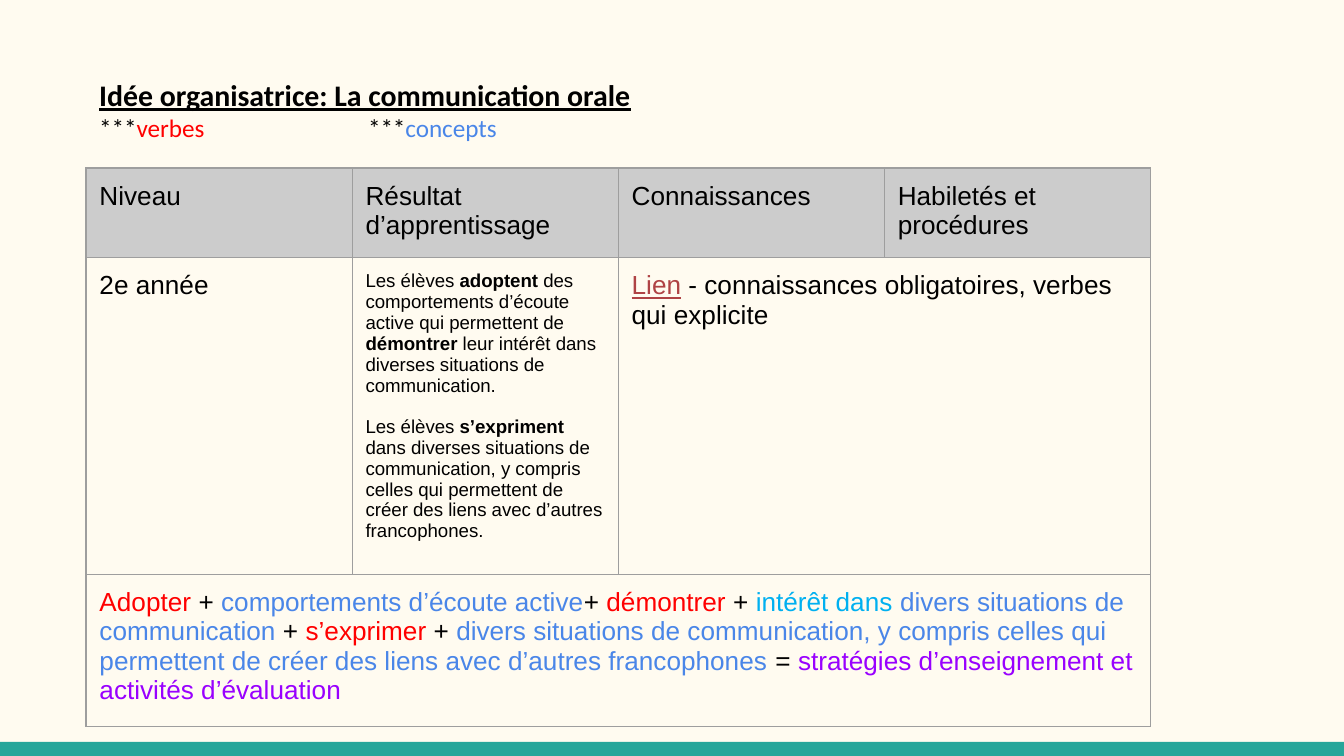
from lxml import etree
from pptx import Presentation
from pptx.dml.color import RGBColor
from pptx.enum.shapes import MSO_SHAPE
from pptx.oxml.ns import qn
from pptx.util import Inches, Pt

RECTANGLE = MSO_SHAPE.RECTANGLE

CREAM = RGBColor(0xFF, 0xFB, 0xF0)
TEAL = RGBColor(0x26, 0xA6, 0x9A)
BLACK = RGBColor(0x00, 0x00, 0x00)
RED = RGBColor(0xFF, 0x00, 0x00)
BLUE = RGBColor(0x4A, 0x86, 0xE8)
SKY = RGBColor(0x00, 0xB0, 0xF0)
PURPLE = RGBColor(0x99, 0x00, 0xFF)
LINK_RED = RGBColor(0xAF, 0x43, 0x45)
HEADER_GRAY = RGBColor(0xCC, 0xCC, 0xCC)
BORDER_GRAY = RGBColor(0x9E, 0x9E, 0x9E)

MARGIN = Inches(0.1)
COLUMN_WIDTH = 1.98
ROW_HEIGHTS = [0.56, 2.09, 1.1]
FRAME_SIZE = Inches(3.28)
HEADERS = ["Niveau", "Résultat d’apprentissage", "Connaissances", "Habiletés et procédures"]
OUTCOMES = [
    [
        ("Les élèves ", BLACK),
        ("adoptent ", BLACK, True),
        ("des comportements d’écoute active qui permettent de ", BLACK),
        ("démontrer", BLACK, True),
        (" leur intérêt dans diverses situations de communication.", BLACK),
    ],
    [
        ("Les élèves ", BLACK),
        ("s’expriment", BLACK, True),
        (" dans diverses situations de communication, y compris celles qui permettent "
         "de créer des liens avec d’autres francophones.", BLACK),
    ],
]
SUMMARY = [
    ("Adopter", RED),
    (" + ", BLACK),
    ("comportements d’écoute active", BLUE),
    ("+ ", BLACK),
    ("démontrer ", RED),
    ("+ ", BLACK),
    ("intérêt dans ", SKY),
    ("divers situations de communication", BLUE),
    (" + ", BLACK),
    ("s’exprimer", RED),
    (" + ", BLACK),
    ("divers situations de communication, y compris celles qui permettent "
     "de créer des liens avec d’autres francophones ", BLUE),
    ("= ", BLACK),
    ("stratégies d’enseignement et activités d’évaluation", PURPLE),
]


def add_run(p, size, font, text, color, bold=False, underline=False):
    r = p.add_run()
    r.text = text
    r.font.size = Pt(size)
    r.font.name = font
    r.font.color.rgb = color
    r.font.bold = bold
    r.font.underline = underline


def write_paragraph(p, segments, size=14, font="Arial"):
    for segment in segments:
        add_run(p, size, font, *segment)


def set_margins(box):
    box.margin_left = box.margin_right = MARGIN
    box.margin_top = box.margin_bottom = MARGIN


def add_tab_stops(p, positions):
    tabs = etree.SubElement(p._p.get_or_add_pPr(), qn("a:tabLst"))
    for position in positions:
        etree.SubElement(tabs, qn("a:tab"), pos=str(Inches(position)), algn="l")


def add_borders(cell):
    tc_pr = cell._tc.get_or_add_tcPr()
    for i, side in enumerate(["lnL", "lnR", "lnT", "lnB"]):
        ln = etree.Element(qn("a:" + side), w=str(Pt(0.75)))
        fill = etree.SubElement(ln, qn("a:solidFill"))
        etree.SubElement(fill, qn("a:srgbClr"), val=str(BORDER_GRAY))
        tc_pr.insert(i, ln)


def style_cell(cell, is_header):
    set_margins(cell)
    if is_header:
        cell.fill.solid()
        cell.fill.fore_color.rgb = HEADER_GRAY
    else:
        cell.fill.background()
    add_borders(cell)


def add_footer_bar(s):
    sp = s.shapes.add_shape(RECTANGLE, 0, Inches(5.52), Inches(10), Inches(0.11))
    sp.shadow.inherit = False
    sp.fill.solid()
    sp.fill.fore_color.rgb = TEAL
    sp.line.fill.background()


def add_heading(s):
    sp = s.shapes.add_textbox(Inches(0.64), Inches(0.47), Inches(9.07), Inches(0.67))
    tf = sp.text_frame
    tf.word_wrap = True
    set_margins(tf)
    title = "Idée organisatrice: La communication orale"
    write_paragraph(tf.paragraphs[0], [(title, BLACK, True, True)], 16, "Calibri")
    legend = [("***", BLACK), ("verbes", RED), ("\t\t***", BLACK), ("concepts", BLUE)]
    p = tf.add_paragraph()
    add_tab_stops(p, [1, 2])
    write_paragraph(p, legend, 13.5, "Calibri")


def add_outcomes(cell):
    tf = cell.text_frame
    write_paragraph(tf.paragraphs[0], OUTCOMES[0], 10)
    p = tf.add_paragraph()
    p.space_before = Pt(11)
    write_paragraph(p, OUTCOMES[1], 10)


def add_curriculum_table(s):
    columns = len(HEADERS)
    frame = s.shapes.add_table(
        len(ROW_HEIGHTS), columns, Inches(0.64), Inches(1.25), FRAME_SIZE, FRAME_SIZE
    )
    table = frame.table
    table.first_row = False
    table.horz_banding = False
    for column in table.columns:
        column.width = Inches(COLUMN_WIDTH)
    for i, height in enumerate(ROW_HEIGHTS):
        table.rows[i].height = Inches(height)
        for cell in table.rows[i].cells:
            style_cell(cell, i == 0)
    frame.width = frame.height = FRAME_SIZE
    table.cell(1, 2).merge(table.cell(1, 3))
    table.cell(2, 0).merge(table.cell(2, 3))

    for i, header in enumerate(HEADERS):
        write_paragraph(table.cell(0, i).text_frame.paragraphs[0], [(header, BLACK)])
    write_paragraph(table.cell(1, 0).text_frame.paragraphs[0], [("2e année", BLACK)])
    add_outcomes(table.cell(1, 1))
    knowledge = [
        ("Lien", LINK_RED, False, True),
        (" - connaissances obligatoires, verbes qui explicite", BLACK),
    ]
    write_paragraph(table.cell(1, 2).text_frame.paragraphs[0], knowledge)
    write_paragraph(table.cell(2, 0).text_frame.paragraphs[0], SUMMARY)


def main():
    prs = Presentation()
    prs.slide_width = Inches(10)
    prs.slide_height = Inches(10 * 9 / 16)
    s = prs.slides.add_slide(prs.slide_layouts[6])
    s.background.fill.solid()
    s.background.fill.fore_color.rgb = CREAM
    add_footer_bar(s)
    add_heading(s)
    add_curriculum_table(s)
    prs.save("out.pptx")


if __name__ == "__main__":
    main()
